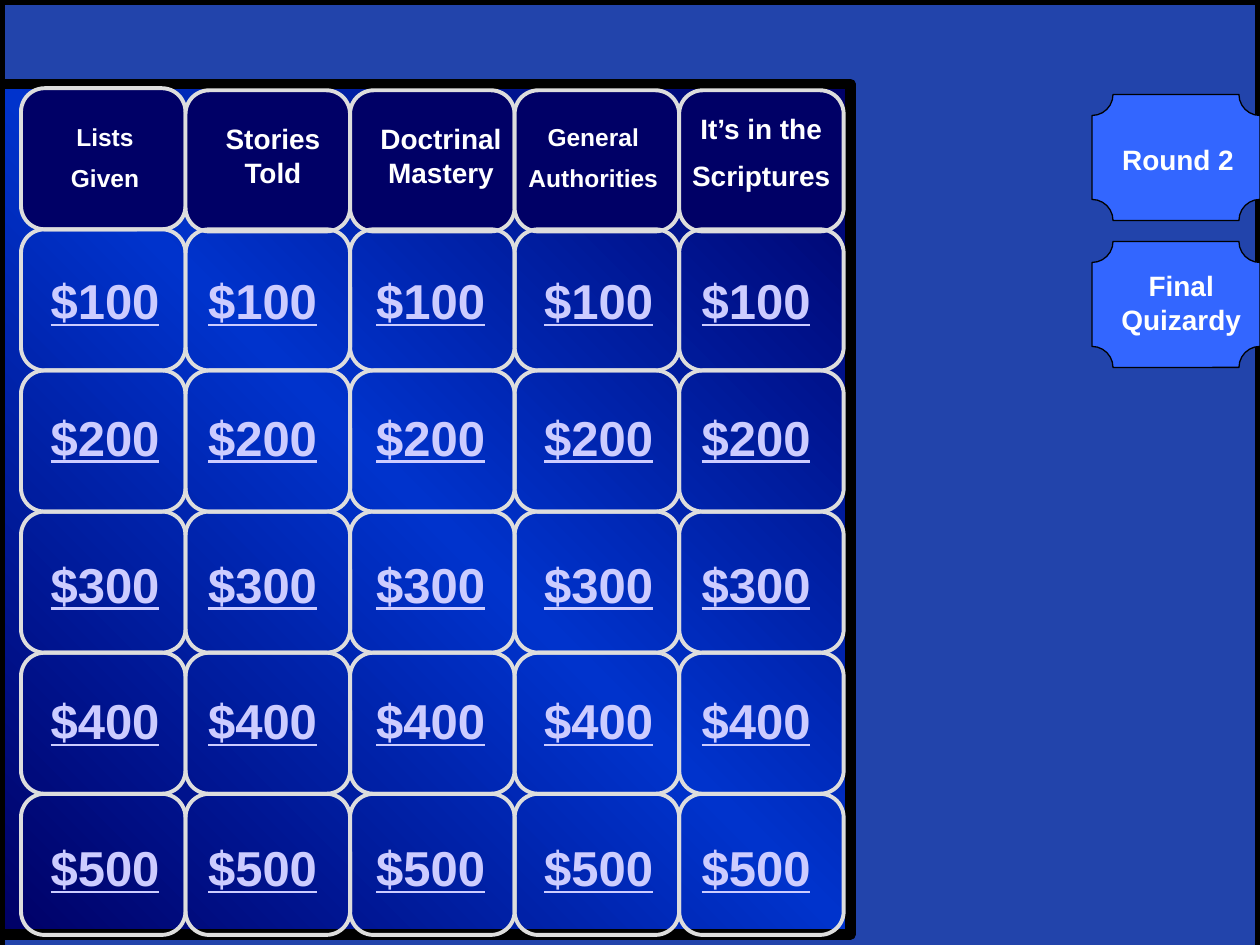
from dataclasses import dataclass

from lxml import etree
from pptx import Presentation
from pptx.dml.color import RGBColor
from pptx.enum.shapes import MSO_SHAPE
from pptx.enum.text import MSO_AUTO_SIZE, PP_ALIGN
from pptx.oxml.ns import qn
from pptx.util import Inches, Pt

RECT, ROUNDED, PLAQUE = MSO_SHAPE.RECTANGLE, MSO_SHAPE.ROUNDED_RECTANGLE, MSO_SHAPE.PLAQUE
CENTER = PP_ALIGN.CENTER
FIT = MSO_AUTO_SIZE.SHAPE_TO_FIT_TEXT


@dataclass(frozen=True)
class Theme:
    font: str = "Arial"
    black: str = "000000"
    white: str = "FFFFFF"
    navy: str = "000066"
    royal: str = "0033CC"
    bright: str = "3366FF"
    border: str = "DDDDDD"
    amount: str = "CCCCFF"
    small: int = 14
    medium: int = 16
    large: int = 28
    thin: float = 0.75
    cell_line: float = 2.25
    frame_line: float = 6
    corner: float = 0.167


class Board:
    """Draws on one slide, measured on a grid of 120 columns by 90 rows."""
    COLS, ROWS = 120, 90

    def __init__(self, prs, theme):
        self.t = theme
        self.s = prs.slides.add_slide(prs.slide_layouts[6])
        self.cw, self.rh = prs.slide_width / self.COLS, prs.slide_height / self.ROWS

    def box(self, x, y, w, h):
        return [round(v) for v in (x * self.cw, y * self.rh, w * self.cw, h * self.rh)]

    def shape(self, kind, at, line, width, fill=None):
        sp = self.s.shapes.add_shape(kind, *self.box(*at))
        sp.shadow.inherit = False
        if kind != RECT:
            sp.adjustments[0] = self.t.corner
        if fill:
            sp.fill.solid()
            sp.fill.fore_color.rgb = RGBColor.from_string(fill)
        else:
            sp.fill.background()
        sp.line.color.rgb = RGBColor.from_string(line)
        sp.line.width = Pt(width)
        return sp

    def fade(self, sp, percent):
        color = sp.fill._xPr.find(qn("a:solidFill"))[0]
        etree.SubElement(color, qn("a:alpha"), val=str(percent * 1000))

    def gradient(self, sp, colors, angle):
        sp.fill.gradient()
        sp.fill.gradient_angle = angle
        stops = sp.fill._fill._gradFill.find(qn("a:gsLst"))
        for stop in list(stops):
            stops.remove(stop)
        for i, color in enumerate(colors):
            pos = str(100000 * i // (len(colors) - 1))
            gs = etree.SubElement(stops, qn("a:gs"), pos=pos)
            etree.SubElement(gs, qn("a:srgbClr"), val=color)

    def text(self, lines, at, size, color=None, spaced=True, wrap=True, underline=False):
        tf = self.s.shapes.add_textbox(*self.box(*at)).text_frame
        tf.word_wrap, tf.auto_size = wrap, FIT
        style = {"name": self.t.font, "size": Pt(size), "bold": True, "underline": underline}
        for i, line in enumerate(lines):
            p = tf.paragraphs[0] if i == 0 else tf.add_paragraph()
            p.alignment = CENTER
            p.space_before = Pt(size / 2 if spaced else 0)
            r = p.add_run()
            r.text = line
            for key, value in style.items():
                setattr(r.font, key, value)
            r.font.color.rgb = RGBColor.from_string(color or self.t.white)


def main():
    prs = Presentation()
    prs.slide_width, prs.slide_height = Inches(10), Inches(7.5)
    t = Theme()
    b = Board(prs, t)

    # Backdrop and game panel
    b.shape(RECT, (0, 0, 120, 90), t.black, t.thin, t.black)
    veil = b.shape(RECT, (0, 0, 120, 91), t.black, t.frame_line, t.bright)
    b.fade(veil, 67)
    panel = b.shape(RECT, (0, 8, 81, 81), t.black, t.frame_line)
    b.gradient(panel, (t.navy, t.royal, t.navy), 45)

    # Cells: a header row above five rows of amounts
    left, top, pitch_x, pitch_y = 2, 8.4, 15.67, 13.44
    text_lefts = (2, 17, 33, 49, 64)
    text_tops = (25.2, 38.2, 52.2, 65.2, 79.2)
    for row in range(6):
        for col, text_left in enumerate(text_lefts):
            header = row == 0
            drop = 0.2 if header and col else 0
            at = (left + col * pitch_x, top + row * pitch_y + drop, pitch_x, pitch_y)
            b.shape(ROUNDED, at, t.border, t.cell_line, t.navy if header else None)
            if not header:
                b.text([f"${row}00"], (text_left, text_tops[row - 1], 16, 6.8),
                       t.large, t.amount, underline=True)

    # Category names
    categories = (
        (("Lists", "Given"), (2, 11, 16, 8.3), t.small, {}),
        (("Stories", "Told"), (17, 11, 18, 7.7), t.medium, {"spaced": False}),
        (("Doctrinal", "Mastery"), (35, 11, 14, 7.7), t.medium,
         {"spaced": False, "wrap": False}),
        (("General", "Authorities"), (49, 11, 15, 8.3), t.small, {}),
        (("It’s in the", "Scriptures"), (64, 10, 17, 9.2), t.medium, {}),
    )
    for lines, at, size, options in categories:
        b.text(lines, at, size, **options)

    # Round buttons
    buttons = (
        ("Round 2", 9, (104, 13, 16.4, 4.4)),
        ("Final Quizardy", 23, (105, 25, 15, 7.7)),
    )
    for label, y, at in buttons:
        b.shape(PLAQUE, (104, y, 16, 12), t.black, t.thin, t.bright)
        b.text([label], at, t.medium)

    prs.save("out.pptx")


if __name__ == "__main__":
    main()
